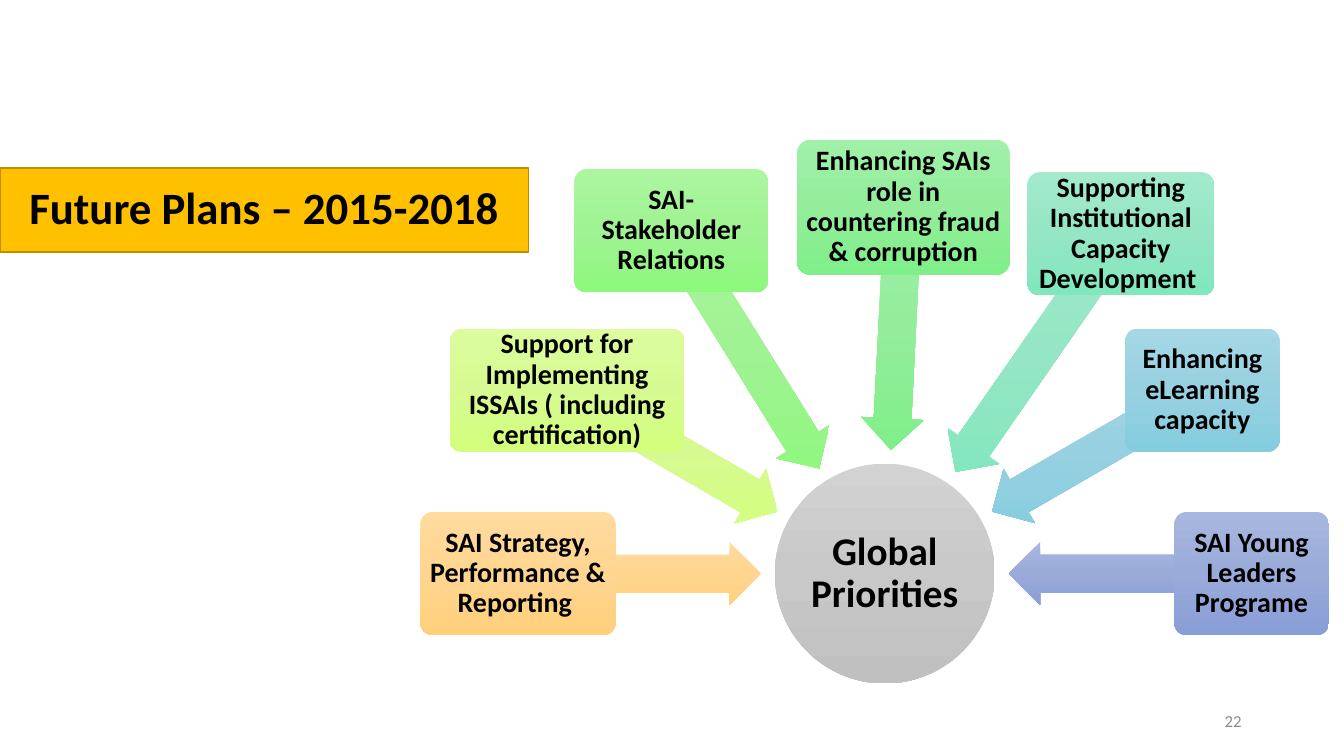
from dataclasses import dataclass
from math import cos, radians, sin

from pptx import Presentation
from pptx.dml.color import RGBColor as Rgb
from pptx.enum.shapes import MSO_SHAPE as Preset
from pptx.enum.text import MSO_ANCHOR as Anchor, MSO_AUTO_SIZE as AutoSize, PP_ALIGN as Align
from pptx.oxml import parse_xml
from pptx.oxml.ns import nsdecls
from pptx.util import Pt


@dataclass(frozen=True)
class Theme:
    font: str = "Calibri"
    ink: str = "000000"
    muted: str = "8C8C8C"
    banner: str = "FFC000"
    banner_line: str = "BD8E00"
    hub: tuple = ("D2D2D2", "C8C8C8", "C0C0C0")
    title_size: float = 32
    hub_size: float = 28
    card_size: float = 20
    number_size: float = 12


THEME = Theme()

# Text, angle around the hub, distance from its centre, width, height, gradient
PRIORITIES = [
    ("SAI Strategy, Performance & Reporting ", 180, 262, 139.5, 88,
     ("FFDB9E", "FFD590", "FFD07C")),
    ("Support for Implementing ISSAIs ( including certification)", 210, 262, 168, 88,
     ("DCFC9F", "D6FA91", "D3FF7C")),
    ("SAI- Stakeholder Relations", 238.1, 288.5, 138.5, 88,
     ("ACF6A0", "9FF392", "8EF77D")),
    ("Enhancing SAIs role in countering fraud & corruption", 272.9, 262, 152, 96.5,
     ("A1F0A9", "93ED9B", "7FEF89")),
    ("Supporting Institutional Capacity Development ", 304.8, 295.5, 133.5, 88,
     ("A3EACC", "95E6C4", "81E7BD")),
    ("Enhancing eLearning capacity", 330, 262, 110.5, 88,
     ("A5D7E5", "97D0E0", "84CDDF")),
    ("SAI Young Leaders Programe", 0, 262, 110.5, 88,
     ("A8B7DF", "9AABD9", "889ED7")),
]


def apply(target, settings):
    for name, value in settings.items():
        setattr(target, name, value)


def write(shape, text, size, color=THEME.ink, bold=True, align=Align.CENTER,
          spacing=0.9, inset=0):
    frame = shape.text_frame
    frame.text = text
    apply(frame, {"word_wrap": True, "auto_size": AutoSize.NONE,
                  "vertical_anchor": Anchor.MIDDLE,
                  "margin_left": Pt(inset), "margin_right": Pt(inset),
                  "margin_top": Pt(0), "margin_bottom": Pt(0)})
    paragraph = frame.paragraphs[0]
    apply(paragraph, {"alignment": align, "line_spacing": spacing})
    font = paragraph.runs[0].font
    apply(font, {"name": THEME.font, "size": Pt(size), "bold": bold})
    font.color.rgb = Rgb.from_string(color)


def add_centred(slide, preset, x, y, width, height, gradient):
    """Add a borderless shape around a centre, shaded from top to bottom."""
    shape = slide.shapes.add_shape(preset, Pt(x - width / 2), Pt(y - height / 2),
                                   Pt(width), Pt(height))
    stops = "".join(f'<a:gs pos="{i * 50000}"><a:srgbClr val="{color}"/></a:gs>'
                    for i, color in enumerate(gradient))
    shape._element.spPr.insert(2, parse_xml(
        f'<a:gradFill {nsdecls("a")} rotWithShape="0"><a:gsLst>{stops}</a:gsLst>'
        '<a:lin ang="5400000" scaled="0"/></a:gradFill>'))
    shape.line.fill.background()
    shape.shadow.inherit = False
    return shape


def add_banner(slide, left, top, width, height):
    title = slide.shapes.title
    apply(title, {"left": Pt(left), "top": Pt(top),
                  "width": Pt(width), "height": Pt(height)})
    title.fill.solid()
    title.fill.fore_color.rgb = Rgb.from_string(THEME.banner)
    title.line.color.rgb = Rgb.from_string(THEME.banner_line)
    title.line.width = Pt(1)
    write(title, "Future Plans – 2015-2018", THEME.title_size, inset=7.2)


def add_priorities(slide, left, top, width, height):
    # Hub
    diameter = 157
    hub_x = left + 0.51 * width
    hub_y = top + height - diameter / 2
    hub = add_centred(slide, Preset.OVAL, hub_x, hub_y, diameter, diameter, THEME.hub)
    write(hub, "Global Priorities", THEME.hub_size)

    # Each arrow runs from a card's centre to just outside the hub
    reach = diameter / 2 + 10
    for text, angle, distance, card_width, card_height, gradient in PRIORITIES:
        across, down = cos(radians(angle)), sin(radians(angle))
        middle = (distance + reach) / 2
        arrow = add_centred(slide, Preset.LEFT_ARROW, hub_x + middle * across,
                            hub_y + middle * down, distance - reach, 44.8, gradient)
        arrow.adjustments[0], arrow.adjustments[1] = 0.6, 0.5
        arrow.rotation = angle

        card = add_centred(slide, Preset.ROUNDED_RECTANGLE, hub_x + distance * across,
                           hub_y + distance * down, card_width, card_height, gradient)
        card.adjustments[0] = 0.1
        write(card, text, THEME.card_size)


def add_page_number(slide, left, top, width, height):
    number = slide.shapes.add_textbox(Pt(left), Pt(top), Pt(width), Pt(height))
    write(number, "22", THEME.number_size, THEME.muted, bold=False,
          align=Align.RIGHT, spacing=1.0, inset=7.2)


def main():
    deck = Presentation()
    apply(deck, {"slide_width": Pt(960), "slide_height": Pt(540)})
    slide = deck.slides.add_slide(deck.slide_layouts[5])
    add_banner(slide, 0, 120, 377.5, 60)
    add_page_number(slide, 678, 500.5, 216, 28.8)
    add_priorities(slide, 301, 100, 649, 388.2)
    deck.save("out.pptx")


if __name__ == "__main__":
    main()
